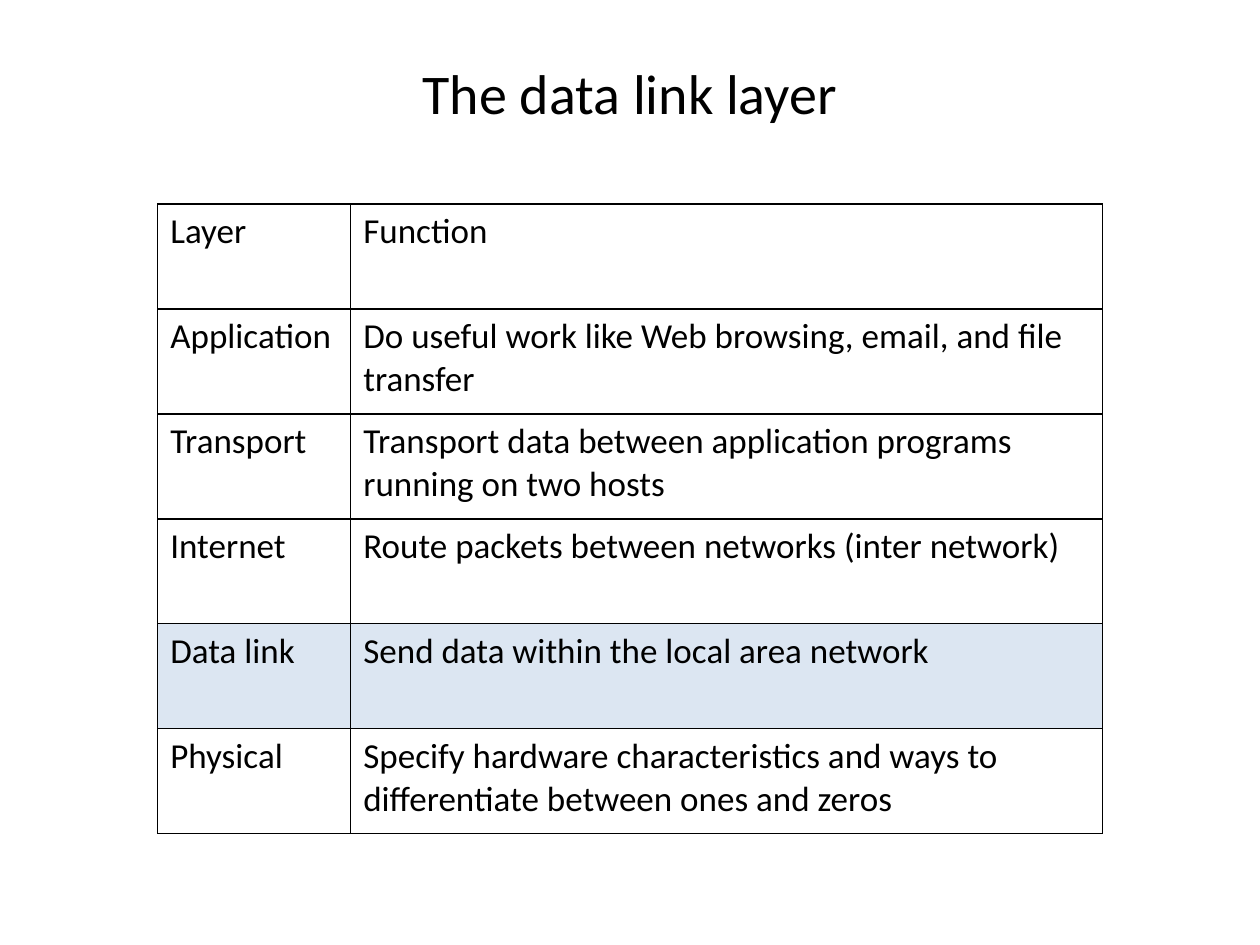
from lxml import etree
from pptx import Presentation
from pptx.dml.color import RGBColor
from pptx.enum import text
from pptx.oxml.ns import qn
from pptx.util import Cm, Pt

BLACK = RGBColor(0x00, 0x00, 0x00)
PALE_BLUE = RGBColor(0xDC, 0xE6, 0xF2)
FONT = "Calibri"
HIGHLIGHTED = "Data link"
LAYERS = [
    ("Layer", "Function"),
    ("Application", "Do useful work like Web browsing, email, and file transfer"),
    ("Transport", "Transport data between application programs running on two hosts"),
    ("Internet", "Route packets between networks (inter network)"),
    ("Data link", "Send data within the local area network"),
    ("Physical", "Specify hardware characteristics and ways to differentiate between ones and zeros"),
]


def format_text(frame, size):
    paragraph = frame.paragraphs[0]
    for name, value in {"name": FONT, "size": Pt(size), "bold": False}.items():
        setattr(paragraph.runs[0].font, name, value)
    paragraph.runs[0].font.color.rgb = BLACK
    return paragraph


def add_borders(cell, color, width):
    """Draw all four sides; the lines must come before the fill in tcPr."""
    properties = cell._tc.get_or_add_tcPr()
    for position, side in enumerate(("a:lnL", "a:lnR", "a:lnT", "a:lnB")):
        line = etree.Element(qn(side), w=str(int(width)))
        fill = etree.SubElement(line, qn("a:solidFill"))
        etree.SubElement(fill, qn("a:srgbClr"), val=str(color))
        properties.insert(position, line)


prs = Presentation()
prs.slide_width, prs.slide_height = Cm(25.4), Cm(19.05)
slide = prs.slides.add_slide(prs.slide_layouts[5])

title = slide.shapes.title
bounds = {"left": Cm(1.27), "top": Cm(0.66), "width": Cm(22.86), "height": Cm(2.41)}
for name, value in bounds.items():
    setattr(title, name, value)
title.text_frame.text = "The data link layer"
title.text_frame.vertical_anchor = text.MSO_ANCHOR.MIDDLE
format_text(title.text_frame, 32).alignment = text.PP_ALIGN.CENTER

layers = slide.shapes.add_table(
    len(LAYERS), 2, Cm(3.18), Cm(4.11), Cm(19.05), Cm(12.7)
).table
layers.first_row = layers.horz_banding = False
for column, width in zip(layers.columns, (3.89, 15.16)):
    column.width = Cm(width)

for row, entries in enumerate(LAYERS):
    for col, entry in enumerate(entries):
        cell = layers.cell(row, col)
        cell.text = entry
        format_text(cell.text_frame, 20).alignment = text.PP_ALIGN.LEFT
        if entries[0] == HIGHLIGHTED:
            cell.fill.solid()
            cell.fill.fore_color.rgb = PALE_BLUE
        else:
            cell.fill.background()
        add_borders(cell, BLACK, Pt(1))

prs.save("out.pptx")
